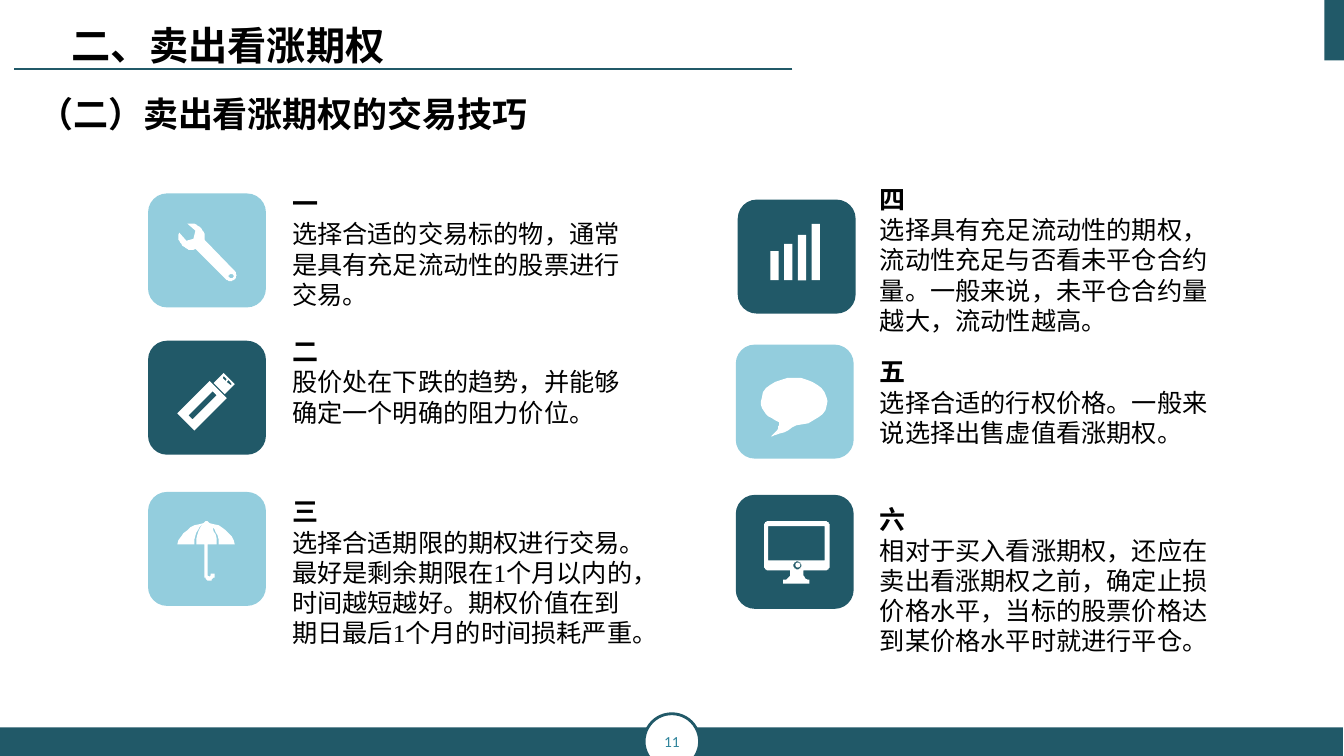
from lxml.etree import SubElement
from pptx import Presentation
from pptx.dml.color import RGBColor
from pptx.enum.shapes import MSO_CONNECTOR as Connector, MSO_SHAPE as Preset
from pptx.enum.text import MSO_ANCHOR as Anchor, PP_ALIGN as Align
from pptx.oxml.ns import qn
from pptx.util import Pt

TEAL = RGBColor(0x21, 0x59, 0x68)
SKY = RGBColor(0x93, 0xCD, 0xDD)
WHITE = RGBColor(0xFF, 0xFF, 0xFF)
BLACK = RGBColor(0, 0, 0)
PAGE_TEAL = RGBColor(0x31, 0x85, 0x9C)

CJK = "Noto Sans CJK SC"
SERIF = "Times New Roman"
TILE_W, TILE_H = 84.2, 81.4
UNIT = 0.72

WRENCH = [
    [(56, 46), (57, 42, 56, 37, 52, 34), (49, 30, 44, 29, 39, 30), (47, 37),
     (45, 45), (38, 47), (31, 39), (29, 43, 30, 48, 34, 52),
     (38, 56, 42, 57, 47, 55), (77, 85), (78, 86, 80, 87, 82, 87),
     (83, 87, 85, 86, 86, 85), (88, 82, 88, 79, 86, 77)],
    [(82, 84), (81, 84, 80, 83, 80, 82), (80, 81, 81, 80, 82, 80),
     (84, 80, 85, 81, 85, 82), (85, 83, 84, 84, 82, 84)],
]
USB_PLUG = [
    [(86, 43), (75, 32), (65, 42), (76, 53)],
    [(77, 40), (74, 37), (75, 35), (78, 38)],
    [(82, 44), (78, 41), (80, 39), (83, 43)],
]
USB_BODY = [
    [(61, 40), (29, 72), (46, 89), (78, 57)],
    [(44, 78), (40, 74), (64, 50), (68, 54)],
]
UMBRELLA = [
    [(70, 52), (86, 52), (83, 41, 73, 32, 61, 31), (60, 30, 59, 29, 58, 29),
     (57, 29, 56, 30, 55, 31), (43, 32, 32, 41, 29, 52), (46, 52),
     (46, 39, 53, 32, 55, 31), (46, 42, 48, 52, 48, 52), (56, 52), (56, 83),
     (56, 85, 58, 88, 61, 88), (63, 88, 66, 85, 66, 83), (66, 81), (62, 81),
     (62, 83), (61, 84), (59, 83), (59, 52), (68, 52),
     (68, 52, 69, 42, 61, 31), (62, 32, 70, 39, 70, 52)],
]
BUBBLE = [
    [(91, 56), (91, 44, 76, 33, 58, 33), (39, 33, 25, 44, 25, 56),
     (25, 66, 32, 73, 43, 77), (43, 80, 42, 85, 35, 91),
     (35, 91, 51, 87, 60, 80), (77, 79, 91, 69, 91, 56)],
]
MONITOR = [
    [(89, 26), (32, 26), (30, 26, 28, 28, 28, 30), (28, 71),
     (28, 73, 30, 75, 32, 75), (54, 75), (54, 75, 55, 84, 47, 84), (47, 88),
     (73, 88), (73, 84), (66, 84, 67, 75, 67, 75), (89, 75),
     (91, 75, 93, 73, 93, 71), (93, 30), (93, 28, 91, 26, 89, 26)],
    [(57, 70), (57, 68, 59, 66, 61, 66), (63, 66, 65, 68, 65, 70),
     (65, 72, 63, 74, 61, 74), (59, 74, 57, 72, 57, 70)],
    [(88, 65), (32, 65), (32, 31), (88, 31)],
]

TIPS = [
    ("一", "选择合适的交易标的物，通常是具有充足流动性的股票进行交易。",
     "Arial", (201.6, 117.4, 255.6, 106.6), (105.8, 138.2), SKY, [WRENCH]),
    ("二", "股价处在下跌的趋势，并能够确定一个明确的阻力价位。",
     SERIF, (201.6, 223.2, 255.6, 85), (105.8, 243.4), TEAL, [USB_PLUG, USB_BODY]),
    ("三", "选择合适期限的期权进行交易。最好是剩余期限在1个月以内的，"
     "时间越短越好。期权价值在到期日最后1个月的时间损耗严重。",
     SERIF, (201.6, 337.7, 264.2, 150.5), (105.8, 351.4), SKY, [UMBRELLA]),
    ("四", "选择具有充足流动性的期权，流动性充足与否看未平仓合约量。"
     "一般来说，未平仓合约量越大，流动性越高。",
     SERIF, (621.4, 114.5, 255.6, 128.2), (527, 142.6), TEAL, []),
    ("五", "选择合适的行权价格。一般来说选择出售虚值看涨期权。",
     SERIF, (621.4, 237.6, 255.6, 85), (525.6, 246.2), SKY, [BUBBLE]),
    ("六", "相对于买入看涨期权，还应在卖出看涨期权之前，确定止损价格水平，"
     "当标的股票价格达到某价格水平时就进行平仓。",
     SERIF, (621.4, 343.4, 255.6, 128.2), (525.6, 353.5), TEAL, [MONITOR]),
]


def flatten(contour, steps=8):
    points = [contour[0]]
    for segment in contour[1:]:
        if len(segment) == 2:
            points.append(segment)
            continue
        knots = [points[-1], segment[:2], segment[2:4], segment[4:]]
        for step in range(1, steps + 1):
            t = step / steps
            weights = ((1 - t) ** 3, 3 * t * (1 - t) ** 2, 3 * t * t * (1 - t), t ** 3)
            points.append(tuple(sum(w * k[axis] for w, k in zip(weights, knots))
                                for axis in (0, 1)))
    return points


class Deck:
    def __init__(self):
        self.show = Presentation()
        self.show.slide_width, self.show.slide_height = Pt(960), Pt(540)
        self.slide = self.show.slides.add_slide(self.show.slide_layouts[5])
        self.shapes = self.slide.shapes

    def paint(self, shape, fill, line=None, width=0):
        shape.shadow.inherit = False
        shape.fill.solid()
        shape.fill.fore_color.rgb = fill
        if line is None:
            shape.line.fill.background()
        else:
            shape.line.color.rgb = line
            shape.line.width = Pt(width)
        return shape

    def block(self, preset, box, fill, line=None, width=0):
        shape = self.shapes.add_shape(preset, *map(Pt, box))
        return self.paint(shape, fill, line, width)

    def icon(self, contours, left, top):
        first, *rest = [flatten(contour) for contour in contours]
        outline = self.shapes.build_freeform(*first[0], scale=Pt(UNIT))
        outline.add_line_segments(first[1:])
        for points in rest:
            outline.move_to(*points[0])
            outline.add_line_segments(points[1:])
        self.paint(outline.convert_to_shape(Pt(left), Pt(top)), WHITE)

    def rule(self, start, end):
        line = self.shapes.add_connector(Connector.STRAIGHT, *map(Pt, start + end))
        line.line.color.rgb = TEAL
        line.line.width = Pt(1.5)
        SubElement(line._element.spPr, qn("a:effectLst"))

    def add_words(self, paragraph, text, size, latin, color=BLACK, bold=False,
                  align=Align.LEFT, leading=None):
        paragraph.alignment = align
        if leading:
            paragraph.line_spacing = Pt(leading)
        run = paragraph.add_run()
        run.text = text
        run.font.size, run.font.bold, run.font.name = Pt(size), bold, latin
        run.font.color.rgb = color
        SubElement(run.font._element, qn("a:ea")).set("typeface", CJK)

    def text_frame(self, shape, wrap=True, anchor=Anchor.TOP):
        frame = shape.text_frame
        frame.word_wrap, frame.vertical_anchor = wrap, anchor
        return frame

    def title(self, text, box):
        heading = self.shapes.title
        heading.left, heading.top, heading.width, heading.height = map(Pt, box)
        frame = self.text_frame(heading)
        self.add_words(frame.paragraphs[0], text, 28, CJK, bold=True,
                       align=Align.CENTER, leading=36)

    def text_box(self, box, wrap=True):
        return self.text_frame(self.shapes.add_textbox(*map(Pt, box)), wrap)

    def tip(self, number, advice, latin, box, tile, color, icons):
        frame = self.text_box(box)
        self.add_words(frame.paragraphs[0], number, 18.6, CJK, bold=True, leading=35.2)
        self.add_words(frame.add_paragraph(), advice, 18, latin, leading=21.6)
        self.block(Preset.ROUNDED_RECTANGLE, tile + (TILE_W, TILE_H), color)
        for contours in icons:
            self.icon(contours, *tile)


def main():
    deck = Deck()
    deck.block(Preset.RECTANGLE, (946.1, 0, 14, 43.2), TEAL)
    deck.block(Preset.RECTANGLE, (0, 519.6, 959.3, 20.4), TEAL)
    badge = deck.block(Preset.OVAL, (460.1, 509.8, 39.6, 39.6), WHITE, TEAL, 2)
    page = deck.text_frame(badge, anchor=Anchor.MIDDLE)
    deck.add_words(page.paragraphs[0], "11", 11, "Calibri", PAGE_TEAL, align=Align.CENTER)
    deck.rule((566, 49), (10, 49))

    deck.title("二、卖出看涨期权", (37.4, 9.4, 250.6, 41))
    subtitle = deck.text_box((20.2, 60.5, 365.8, 37.4), wrap=False)
    deck.add_words(subtitle.paragraphs[0], "（二）卖出看涨期权的交易技巧", 25, SERIF,
                   bold=True, leading=32)

    for tip in TIPS:
        deck.tip(*tip)
    for index, height in enumerate((20.9, 25.9, 32.4, 40.3)):
        deck.block(Preset.RECTANGLE, (550.3 + 9.8 * index, 200.2 - height, 6, height), WHITE)
    deck.block(Preset.OVAL, (568.1, 401.8, 3.6, 3.6), WHITE)

    deck.show.save("out.pptx")


if __name__ == "__main__":
    main()
